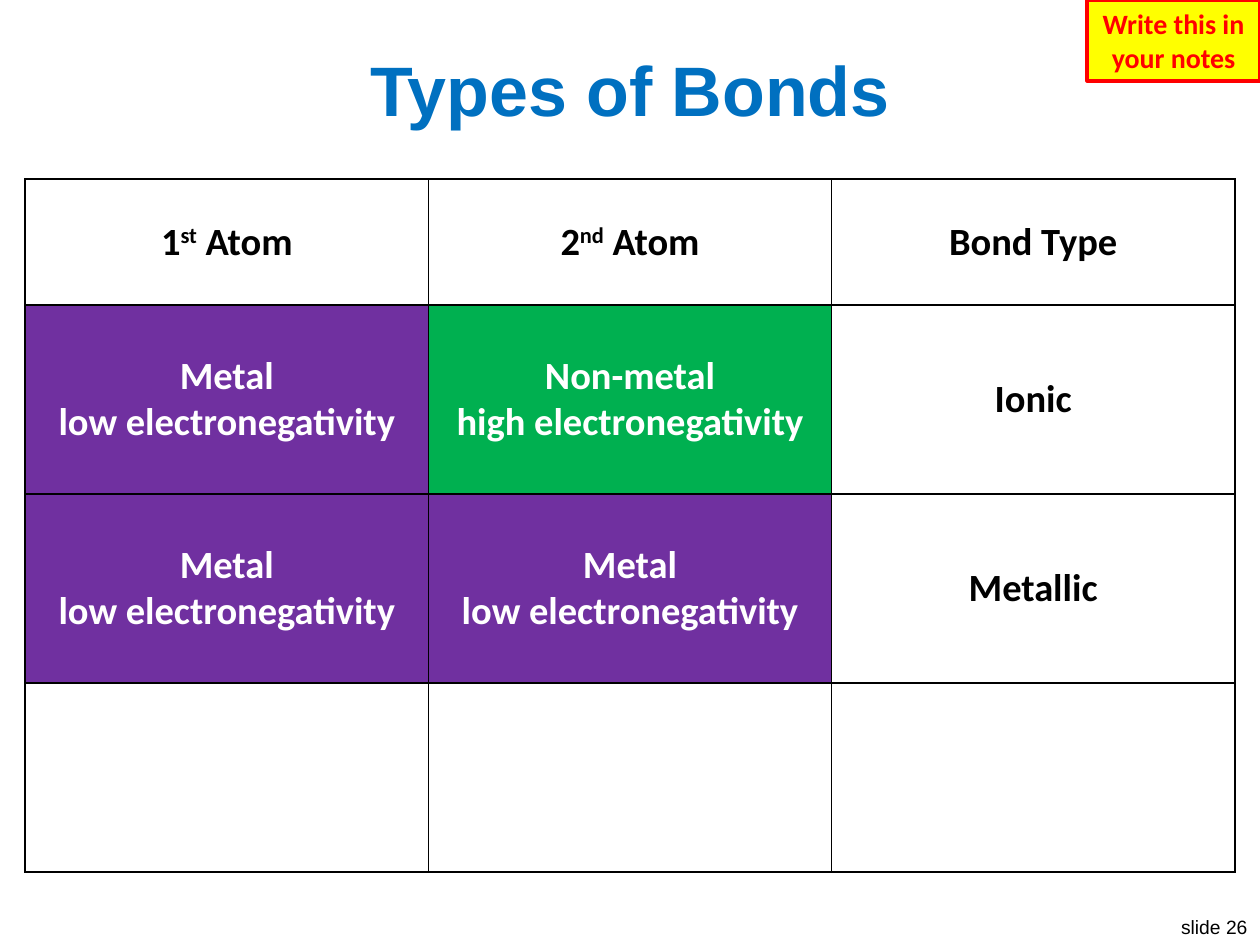
import pptx
import pptx.dml.color
import pptx.enum.shapes
import pptx.enum.text
import pptx.oxml
import pptx.oxml.ns
import pptx.util

PX = 9144  # EMU per px, 100 px to the inch
ALIGN = pptx.enum.text.PP_ALIGN
ANCHOR = pptx.enum.text.MSO_ANCHOR

BLACK, WHITE, RED = "000000", "FFFFFF", "FF0000"
PURPLE, GREEN = "7030A0", "00B050"


def color(code):
    return pptx.dml.color.RGBColor.from_string(code)


def px(*nums):
    return [pptx.util.Emu(num * PX) for num in nums]


class Deck:
    head = "Arial"
    body = "Calibri"

    def __init__(self, wide, high):
        self.prs = pptx.Presentation()
        self.prs.slide_width, self.prs.slide_height = px(wide, high)
        self.slide = self.prs.slides.add_slide(self.prs.slide_layouts[6])

    def fill_text(self, frame, lines, size, font, ink, bold=True, align=ALIGN.CENTER):
        """Each line is a string; a caret pair, as in 1^st^, raises its text."""
        for num, line in enumerate(lines):
            para = frame.add_paragraph() if num else frame.paragraphs[0]
            para.alignment = align
            para.font.name, para.font.size = font, pptx.util.Pt(size)
            para.font.bold = bold
            para.font.color.rgb = color(ink)
            for part, words in enumerate(line.split("^")):
                run = para.add_run()
                run.text = words
                if part % 2:
                    run._r.get_or_add_rPr().set("baseline", "30000")

    def text(self, box, words, size, ink, wrap=True, **look):
        frame = self.slide.shapes.add_textbox(*px(*box)).text_frame
        frame.word_wrap = wrap
        frame.vertical_anchor = ANCHOR.MIDDLE
        self.fill_text(frame, [words], size, self.head, ink, **look)

    def badge(self, box, words, size, fill, ink):
        kind = pptx.enum.shapes.MSO_SHAPE.RECTANGLE
        shape = self.slide.shapes.add_shape(kind, *px(*box))
        shape.shadow.inherit = False
        shape.fill.solid()
        shape.fill.fore_color.rgb = color(fill)
        shape.line.color.rgb = color(ink)
        shape.line.width = pptx.util.Pt(2.25)
        shape.text_frame.word_wrap = True
        self.fill_text(shape.text_frame, [words], size, self.body, ink)

    def border(self, cell, ink, width):
        props = cell._tc.get_or_add_tcPr()
        for num, side in enumerate("LRTB"):
            props.insert(num, pptx.oxml.parse_xml(
                f'<a:ln{side} {pptx.oxml.ns.nsdecls("a")} w="{pptx.util.Pt(width)}">'
                f'<a:solidFill><a:srgbClr val="{ink}"/></a:solidFill></a:ln{side}>'))

    def table(self, box, highs, rows, size):
        table = self.slide.shapes.add_table(len(rows), len(rows[0]), *px(*box)).table
        table.first_row = table.horz_banding = False
        for row, high in zip(table.rows, highs):
            row.height = px(high)[0]
        for row, items in zip(table.rows, rows):
            for cell, (lines, fill) in zip(row.cells, items):
                cell.vertical_anchor = ANCHOR.MIDDLE
                self.border(cell, BLACK, 1)
                if fill:
                    cell.fill.solid()
                    cell.fill.fore_color.rgb = color(fill)
                else:
                    cell.fill.background()
                ink = WHITE if fill else BLACK
                self.fill_text(cell.text_frame, lines, size, self.body, ink)


def plain(*lines):
    return lines, None


def main():
    deck = Deck(1000, 750)

    # Slide number and title
    deck.text((925, 721, 75, 29), "slide 26", 11, BLACK,
              wrap=False, bold=False, align=ALIGN.RIGHT)
    deck.text((20, 30, 960, 80), "Types of Bonds", 40, "0070C0")

    # Bond table, last row left open
    metal = ("Metal", "low electronegativity"), PURPLE
    other = ("Non-metal", "high electronegativity"), GREEN
    rows = [
        [plain("1^st^ Atom"), plain("2^nd^ Atom"), plain("Bond Type")],
        [metal, other, plain("Ionic")],
        [metal, metal, plain("Metallic")],
        [plain()] * 3,
    ]
    deck.table((20, 142, 960, 550), (100, 150, 150, 150), rows, 22)

    # Reminder in the corner
    deck.badge((863, 0, 137, 64), "Write this in your notes", 16, "FFFF00", RED)

    deck.prs.save("out.pptx")


if __name__ == "__main__":
    main()
